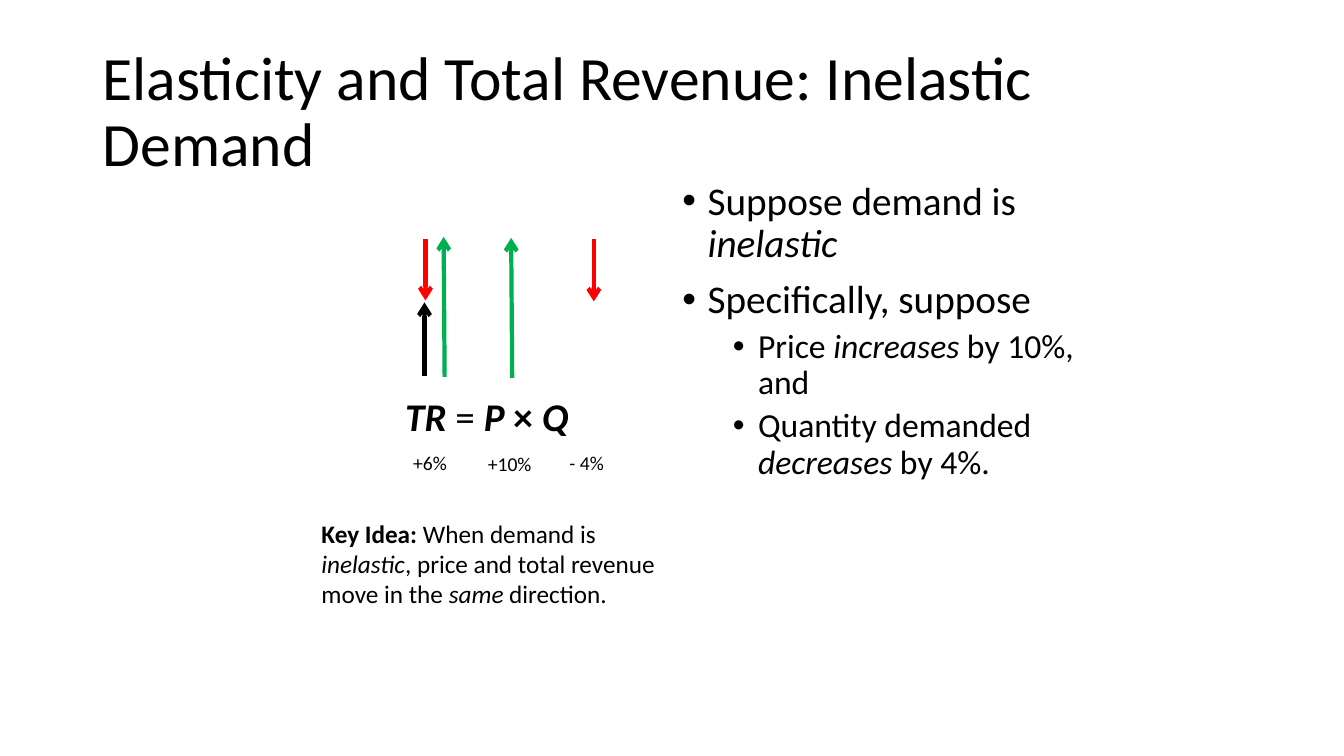
from lxml import etree
from pptx import Presentation
from pptx import util as u
from pptx.dml import color
from pptx.enum import shapes, text
from pptx.oxml import ns

BLACK, GREEN, RED = "000000", "00B050", "FF0000"


def rgb(code):
    return color.RGBColor.from_string(code)


def apply(item, form):
    for key, value in form.items():
        setattr(item, key, value)


def child(node, tag, **attrs):
    return etree.SubElement(node, ns.qn(tag), attrs)


class Deck:
    font = "Calibri"
    ink = BLACK
    weight = u.Pt(3)

    def __init__(self):
        self.file = Presentation()
        apply(self.file, {"slide_width": u.Inches(13.33), "slide_height": u.Inches(7.5)})
        self.slide = self.file.slides.add_slide(self.file.slide_layouts[6])

    def box(self, place, anchor=text.MSO_ANCHOR.TOP):
        frame = self.slide.shapes.add_textbox(*map(u.Inches, place)).text_frame
        apply(frame, {"word_wrap": True, "vertical_anchor": anchor})
        return frame

    def words(self, para, size, runs, form=None):
        apply(para, form or {})
        for part, style in runs:
            run = para.add_run()
            run.text = part
            apply(run.font, {"name": self.font, "size": u.Pt(size),
                             "bold": "b" in style, "italic": "i" in style})
            run.font.color.rgb = rgb(self.ink)

    def label(self, place, size, *runs):
        self.words(self.box(place).paragraphs[0], size, runs)

    def title(self, place, line):
        frame = self.box(place, text.MSO_ANCHOR.MIDDLE)
        self.words(frame.paragraphs[0], 44, [(line, "")], {"line_spacing": 0.9})

    def bullets(self, place, items):
        frame = self.box(place)
        for n, (level, runs) in enumerate(items):
            para = frame.add_paragraph() if n else frame.paragraphs[0]
            size, gap = ((28, 10), (24, 5))[level]
            self.words(para, size, runs, {"level": level, "line_spacing": 0.9,
                                          "space_before": u.Pt(gap)})
            props = para._p.get_or_add_pPr()
            props.set("marL", str(u.Inches(0.25 + level * 0.5)))
            props.set("indent", str(u.Inches(-0.25)))
            child(props, "a:buFont", typeface="Arial")
            child(props, "a:buChar", char="•")

    def arrow(self, tint, *ends):
        link = self.slide.shapes.add_connector(
            shapes.MSO_CONNECTOR.STRAIGHT, *map(u.Inches, ends))
        link.line.width = self.weight
        link.line.color.rgb = rgb(tint)
        props = link._element.spPr
        child(props.get_or_add_ln(), "a:tailEnd", type="arrow")
        child(props, "a:effectLst")


def main():
    deck = Deck()
    deck.title((0.92, 0.4, 11.5, 1.45), "Elasticity and Total Revenue: Inelastic Demand")
    deck.bullets((6.67, 1.75, 4.5, 3.28), [
        (0, [("Suppose demand is ", ""), ("inelastic", "i")]),
        (0, [("Specifically, suppose", "")]),
        (1, [("Price ", ""), ("increases", "i"), (" by 10%, and", "")]),
        (1, [("Quantity demanded ", ""), ("decreases", "i"), (" by 4%.", "")]),
    ])
    deck.label((3.92, 3.84, 2.25, 0.57), 28, ("TR", "bi"), (" = ", ""),
               ("P ", "bi"), ("× ", "b"), ("Q", "bi"))
    for tint, *ends in (
        (GREEN, 5.08, 3.75, 5.07, 2.36),
        (GREEN, 4.41, 3.74, 4.4, 2.35),
        (RED, 5.89, 2.37, 5.89, 2.99),
        (RED, 4.22, 2.37, 4.22, 2.98),
        (BLACK, 4.21, 3.73, 4.21, 3),
    ):
        deck.arrow(tint, *ends)
    for change, left, top, width in (
        ("+6%", 4, 4.42, 0.74),
        ("+10%", 4.74, 4.43, 0.74),
        ("- 4%", 5.55, 4.42, 0.66),
    ):
        deck.label((left, top, width, 0.34), 14, (change, ""))
    deck.label((3.09, 5.09, 3.58, 1.01), 18, ("Key Idea: ", "b"),
               ("When demand is ", ""), ("inelastic", "i"),
               (", price and total revenue move in the ", ""),
               ("same", "i"), (" direction.", ""))
    deck.file.save("out.pptx")


if __name__ == "__main__":
    main()
